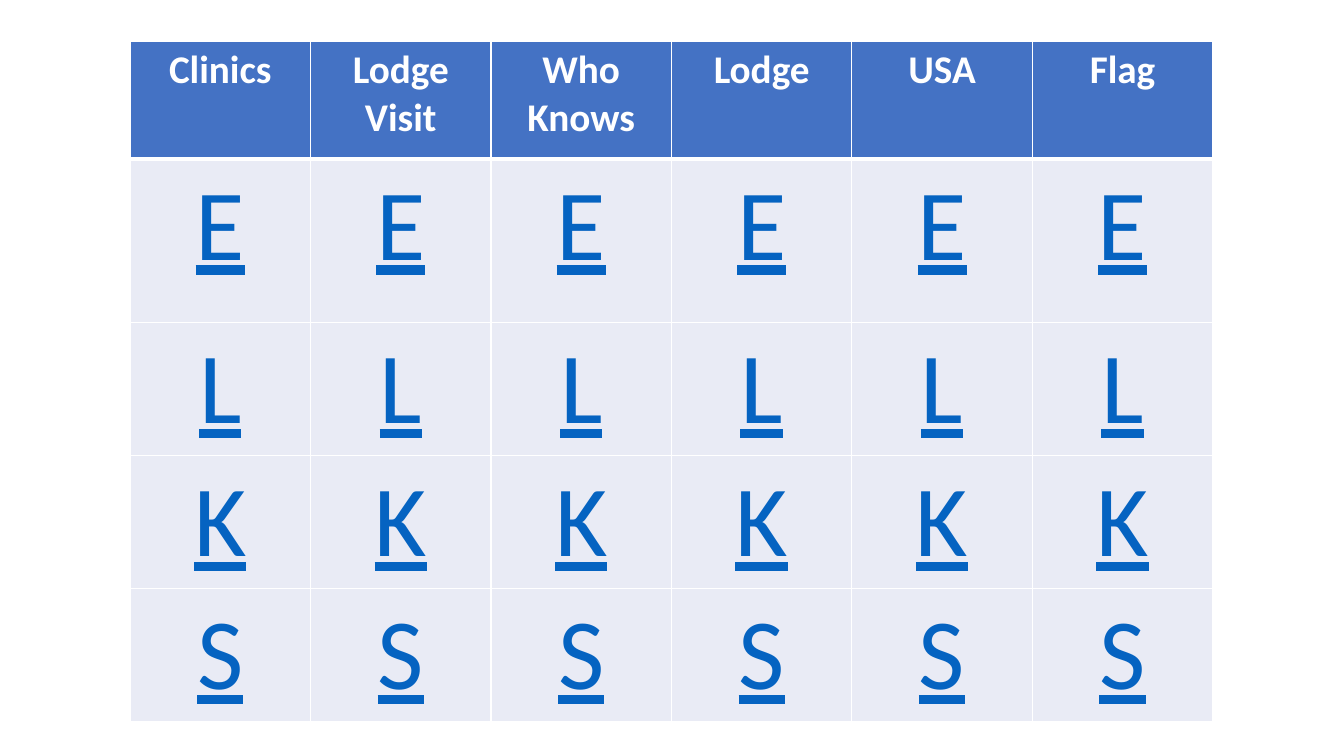
import pptx
import pptx.dml.color
import pptx.enum.text
import pptx.oxml
import pptx.oxml.ns
import pptx.util
from pptx.util import Inches

WHITE = pptx.dml.color.RGBColor(0xFF, 0xFF, 0xFF)
HEADER_BLUE = pptx.dml.color.RGBColor(0x44, 0x72, 0xC4)
PALE_BLUE = pptx.dml.color.RGBColor(0xE9, 0xEB, 0xF5)
LETTER_BLUE = pptx.dml.color.RGBColor(0x05, 0x63, 0xC1)

HEADINGS = ["Clinics", "Lodge\nVisit", "Who\nKnows", "Lodge", "USA", "Flag"]
LETTERS = ["E", "L", "K", "S"]
ROW_HEIGHTS = [1.17, 1.62, 1.32, 1.32, 1.32]
COLUMN_WIDTH = 1.79


def add_border(cell, side, points):
    """Draw a white line on one side (L, R, T or B) of a cell."""
    cell._tc.get_or_add_tcPr().append(pptx.oxml.parse_xml(
        f'<a:ln{side} {pptx.oxml.ns.nsdecls("a")} w="{pptx.util.Pt(points)}">'
        f'<a:solidFill><a:srgbClr val="{WHITE}"/></a:solidFill></a:ln{side}>'))


prs = pptx.Presentation()
prs.slide_width = Inches(13.33)
prs.slide_height = Inches(7.5)
s = prs.slides.add_slide(prs.slide_layouts[6])

rows = [HEADINGS] + [[letter] * len(HEADINGS) for letter in LETTERS]
table = s.shapes.add_table(
    len(rows), len(HEADINGS), Inches(1.29), Inches(0.41),
    Inches(COLUMN_WIDTH * len(HEADINGS)), Inches(sum(ROW_HEIGHTS))).table
table.horz_banding = False
for column in table.columns:
    column.width = Inches(COLUMN_WIDTH)

for i, texts in enumerate(rows):
    table.rows[i].height = Inches(ROW_HEIGHTS[i])
    is_header = i == 0
    for j, text in enumerate(texts):
        cell = table.cell(i, j)
        cell.text = text
        add_border(cell, "L", 1)
        add_border(cell, "R", 1)
        add_border(cell, "T", 3 if i == 1 else 1)
        add_border(cell, "B", 3 if is_header else 1)
        cell.fill.solid()
        cell.fill.fore_color.rgb = HEADER_BLUE if is_header else PALE_BLUE
        for p in cell.text_frame.paragraphs:
            p.alignment = pptx.enum.text.PP_ALIGN.CENTER
            p.font.name = "Calibri"
            p.font.size = pptx.util.Pt(28 if is_header else 72)
            p.font.bold = is_header
            p.font.underline = not is_header
            p.font.color.rgb = WHITE if is_header else LETTER_BLUE

prs.save("out.pptx")
